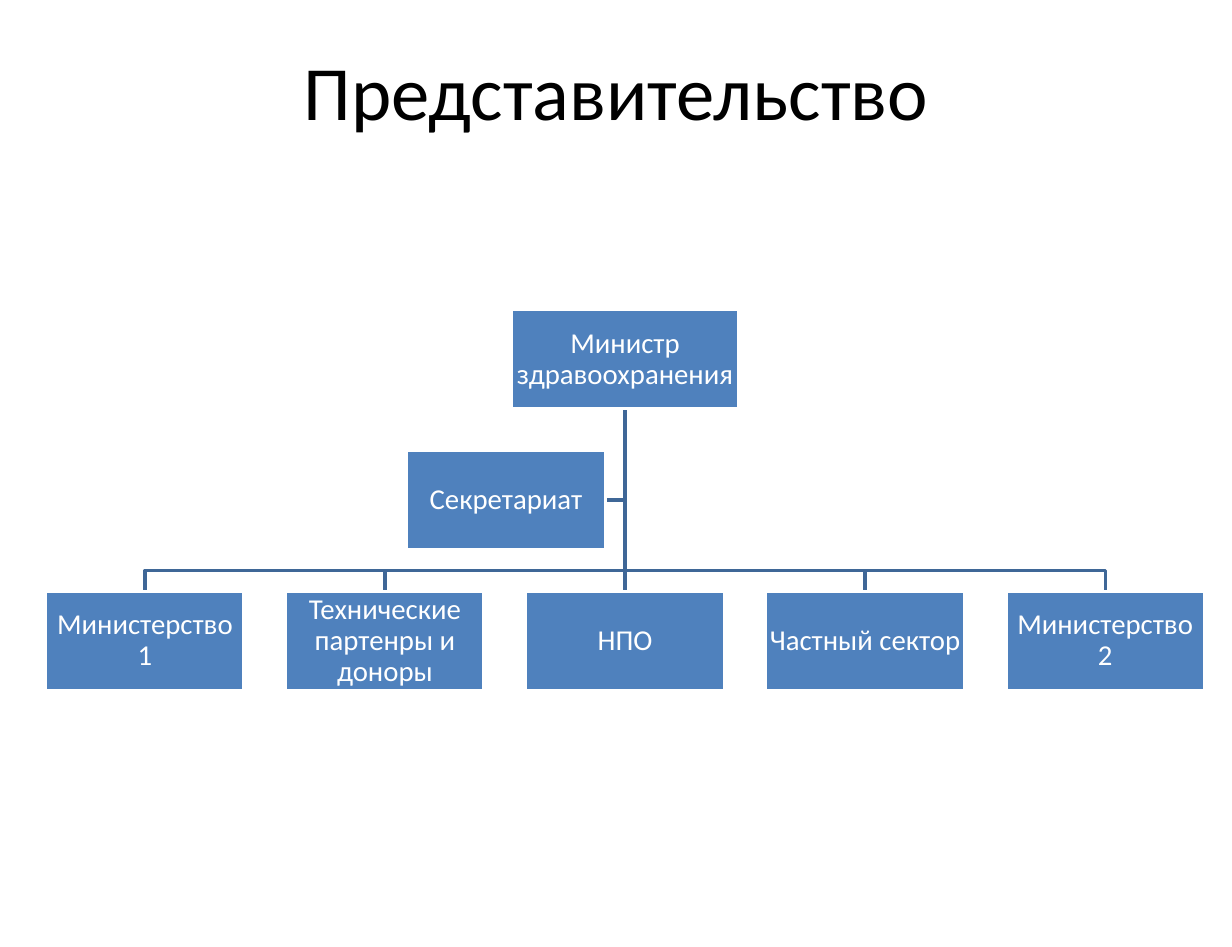
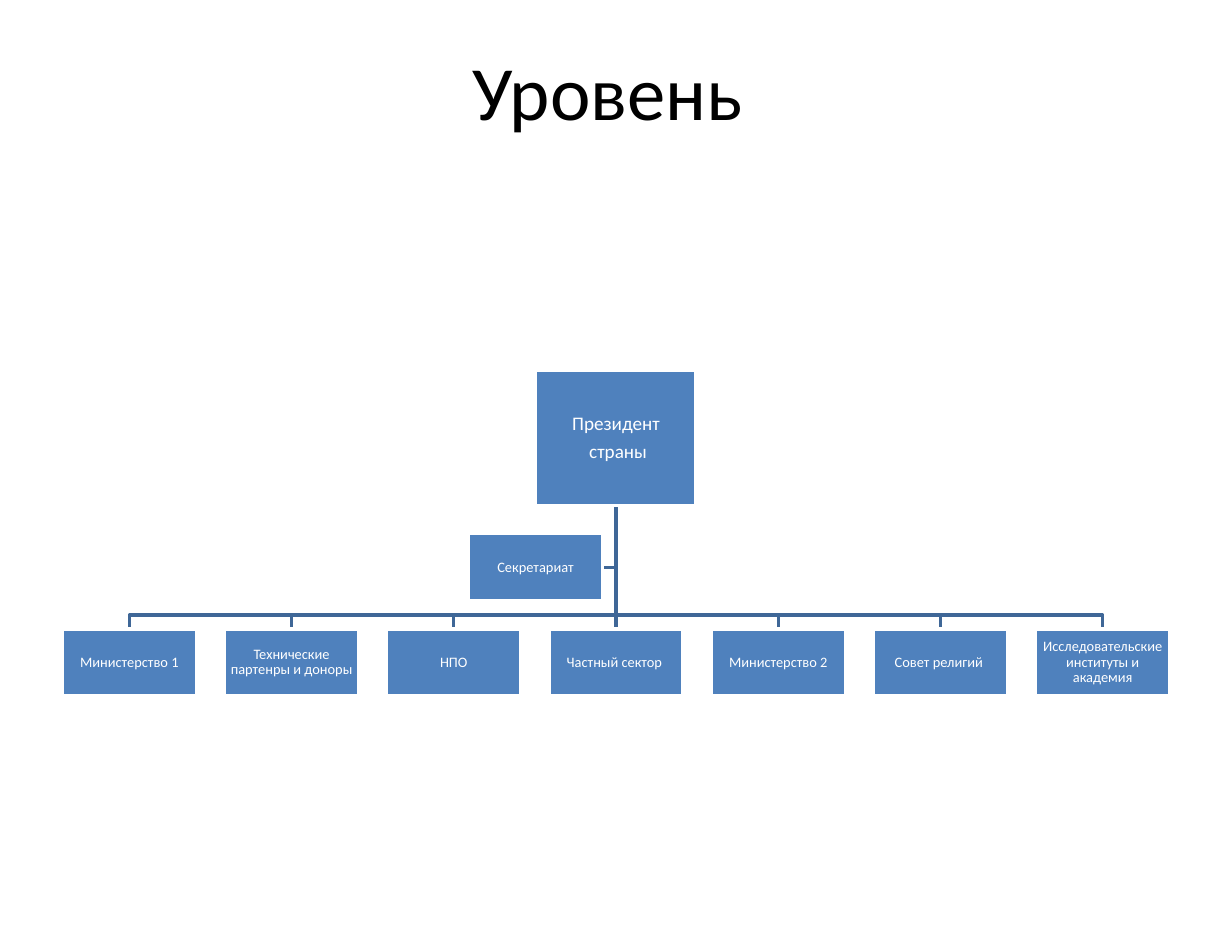
import pptx
import pptx.util
import pptx.dml.color
import pptx.enum.shapes
import pptx.enum.text
import pptx.oxml.xmlchemy

Cm, Pt = pptx.util.Cm, pptx.util.Pt
BLUE, LINE, WHITE, BLACK = "4F81BD", "3F6797", "FFFFFF", "000000"
WIDE, HIGH = 27.2, 20.9

charts = [
    dict(title="Представительство", head="Министр здравоохранения",
         mid=13.8, top=6.84, head_w=5.03, head_h=2.18, box_w=4.38,
         head_pt=18, box_pt=18,
         names=["Министерство 1", "Технические партенры и доноры", "НПО",
                "Частный сектор ", "Министерство 2"]),
    dict(title="Уровень ", head="Президент\n страны",
         mid=13.6, top=8.18, head_w=3.54, head_h=2.98, box_w=2.96,
         head_pt=12, box_pt=9,
         names=["Министерство 1", "Технические партенры и доноры", "НПО",
                "Частный сектор ", "Министерство 2", "Совет религий ",
                "Исследовательские институты и академия"]),
]


def paint(fmt, color):
    """Set a solid colour on a fill."""
    fmt.solid()
    fmt.fore_color.rgb = pptx.dml.color.RGBColor.from_string(color)


def write(frame, text, size, color=WHITE, anchor="MIDDLE", inset=(0.03, 0.03),
          spacing=0.9):
    frame.word_wrap = True
    frame.auto_size = pptx.enum.text.MSO_AUTO_SIZE.NONE
    frame.vertical_anchor = getattr(pptx.enum.text.MSO_ANCHOR, anchor)
    frame.margin_left = frame.margin_right = Cm(inset[0])
    frame.margin_top = frame.margin_bottom = Cm(inset[1])
    frame.text = text
    for para in frame.paragraphs:
        para.alignment = pptx.enum.text.PP_ALIGN.CENTER
        para.line_spacing = spacing
        para.font.name = "Calibri"
        para.font.size = Pt(size)
        paint(para.font.fill, color)
    for para in frame.paragraphs[:-1]:
        para.space_after = Pt(0.35 * size)


deck = pptx.Presentation()
deck.slide_width, deck.slide_height = Cm(WIDE), Cm(HIGH)

for chart in charts:
    slide = deck.slides.add_slide(deck.slide_layouts[5])
    title = slide.shapes.title
    title.left, title.top = Cm(1.36), Cm(0.84)
    title.width, title.height = Cm(24.48), Cm(3.48)
    write(title.text_frame, chart["title"], 48, color=BLACK, anchor="TOP",
          inset=(0.28, 0.13), spacing=1.0)

    # Every box is half as high as wide; gaps follow from the width.
    mid, width, names = chart["mid"], chart["box_w"], chart["names"]
    height, gap, step = width / 2, 0.21 * width, 1.21 * width
    base = chart["top"] + chart["head_h"]
    aide = base + gap
    row = aide + height + gap
    bar = row - gap / 2
    aide_x = mid - 1.1 * width
    spots = [mid + (i - (len(names) - 1) / 2) * step for i in range(len(names))]

    # Each elbow runs from the foot of the head box to one other box.
    level = aide + height / 2
    elbows = [[(mid, level), (aide_x + width, level)]]
    elbows += [[(mid, bar), (x, bar), (x, row)]
               for x in reversed(spots) if abs(x - mid) > 0.01]
    for bends in elbows:
        pen = slide.shapes.build_freeform(Cm(mid), Cm(base))
        pen.add_line_segments([(Cm(x), Cm(y)) for x, y in bends], close=False)
        link = pen.convert_to_shape()
        link.shadow.inherit = False
        link.fill.background()
        paint(link.line.fill, LINE)
        link.line.width = Pt(2)

    trunk = slide.shapes.add_connector(
        pptx.enum.shapes.MSO_CONNECTOR.STRAIGHT,
        Cm(mid), Cm(base), Cm(mid), Cm(row))
    paint(trunk.line.fill, LINE)
    trunk.line.width = Pt(2)
    trunk._element.spPr.append(pptx.oxml.xmlchemy.OxmlElement("a:effectLst"))

    boxes = [(chart["head"], mid - chart["head_w"] / 2, chart["top"],
              chart["head_w"], chart["head_h"], chart["head_pt"])]
    boxes += [(name, x - width / 2, row, width, height, chart["box_pt"])
              for name, x in zip(names, spots)]
    boxes.append(("Секретариат", aide_x, aide, width, height, chart["box_pt"]))
    for text, *place, size in boxes:
        box = slide.shapes.add_shape(
            pptx.enum.shapes.MSO_SHAPE.RECTANGLE, *map(Cm, place))
        box.shadow.inherit = False
        paint(box.fill, BLUE)
        paint(box.line.fill, WHITE)
        box.line.width = Pt(2)
        write(box.text_frame, text, size)

deck.save("out.pptx")
